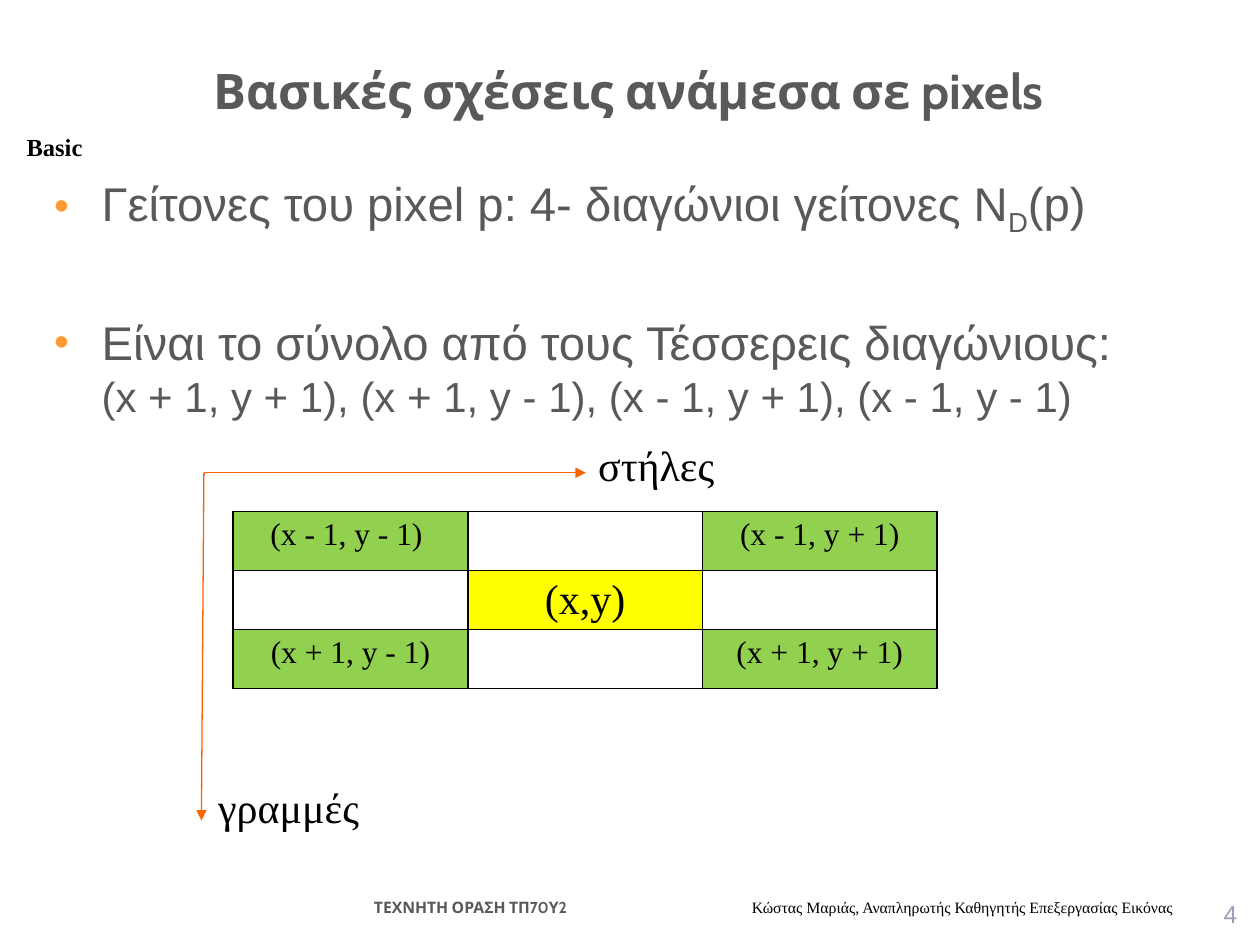
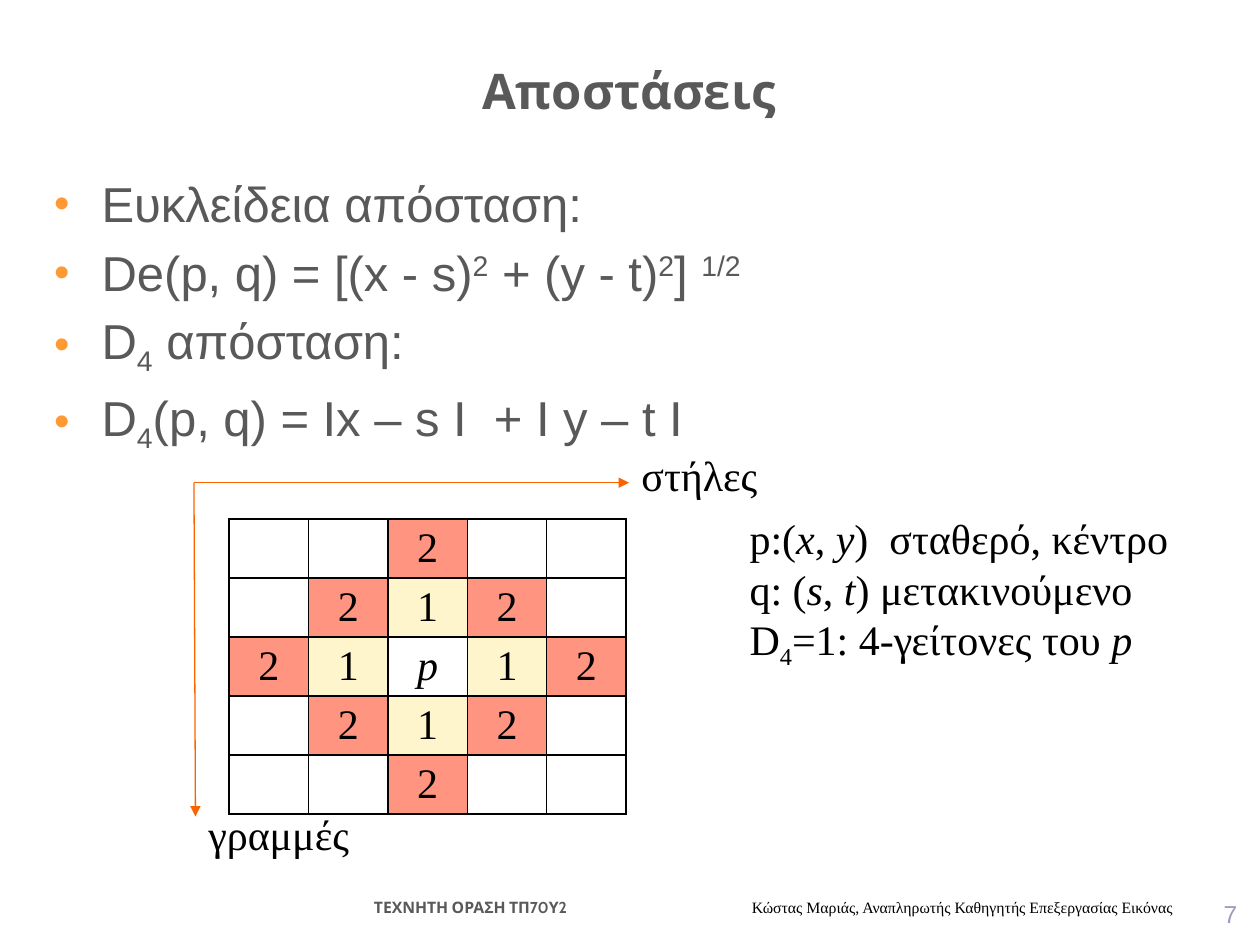
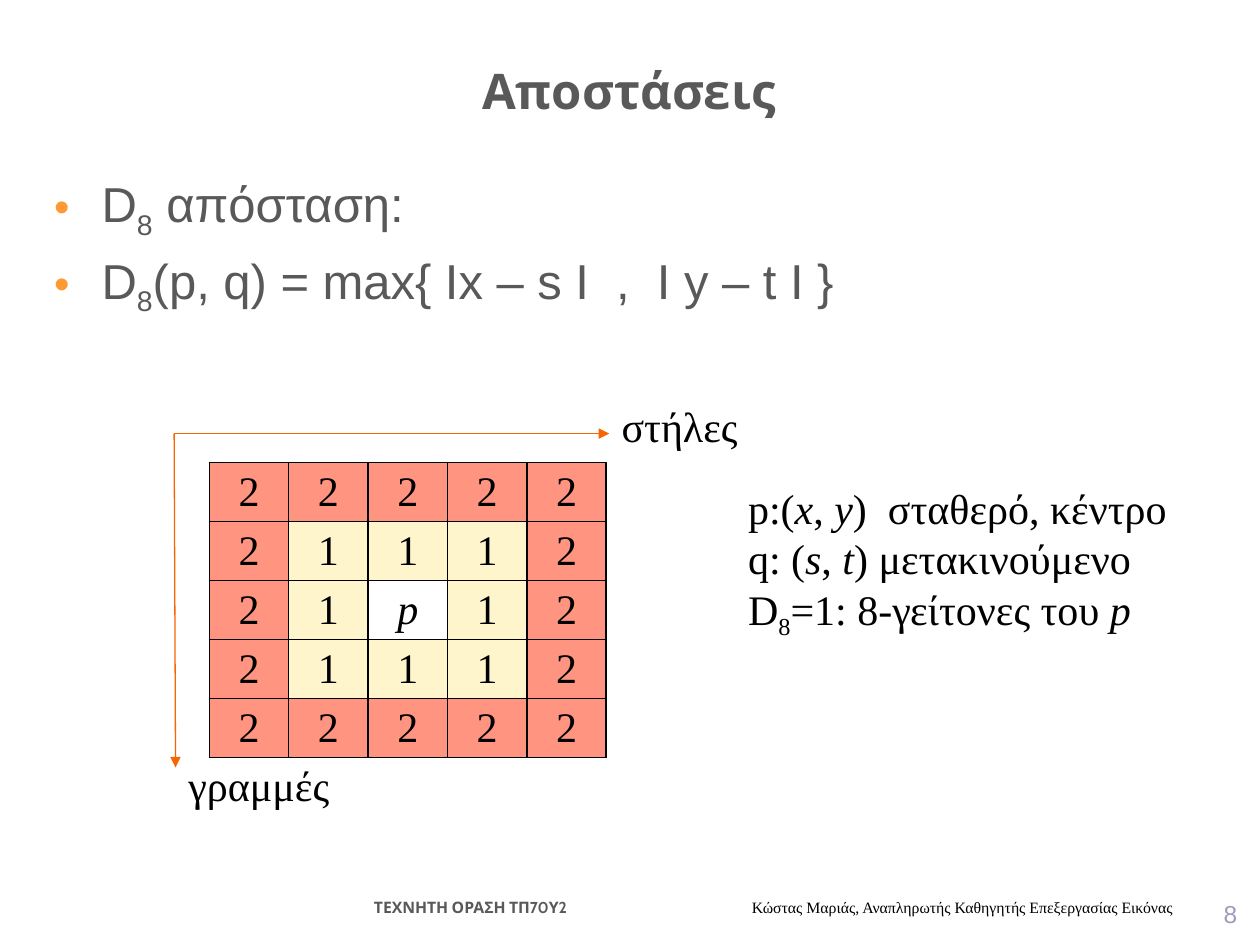
from dataclasses import dataclass

from lxml import etree
from pptx import Presentation
from pptx.dml.color import RGBColor
from pptx.enum.shapes import MSO_CONNECTOR
from pptx.enum.text import MSO_ANCHOR, PP_ALIGN
from pptx.oxml.ns import qn
from pptx.util import Cm, Pt

STRAIGHT = MSO_CONNECTOR.STRAIGHT
TOP, BOTTOM = MSO_ANCHOR.TOP, MSO_ANCHOR.BOTTOM
LEFT, CENTER, RIGHT = PP_ALIGN.LEFT, PP_ALIGN.CENTER, PP_ALIGN.RIGHT
SUB, SUP, ITALIC = {"baseline": -25}, {"baseline": 30}, {"italic": True}


@dataclass(frozen=True)
class Theme:
    body_font: str = "Arial"
    title_font: str = "Cabin"
    label_font: str = "Times New Roman"
    grey: str = "595959"
    black: str = "000000"
    white: str = "FFFFFF"
    number: str = "A299BD"
    bullet: str = "FF9933"
    axis: str = "F96400"
    diagonal: str = "92D050"
    center: str = "FFFF00"
    near: str = "FFF5CC"
    far: str = "FF9480"
    title_size: int = 28
    body_size: int = 28
    dense_size: int = 27
    label_size: int = 24
    cell_size: int = 18
    small_size: int = 14
    footer_size: int = 9


class Deck:
    def __init__(self, theme):
        self.t = theme
        self.prs = Presentation()
        self.prs.slide_width, self.prs.slide_height = Cm(25.4), Cm(19.05)
        self.s = None
        self.label_format = self.format(theme.label_font, theme.label_size, theme.black)

    def format(self, name, size, color, **extra):
        return {"name": name, "size": size, "color": color, **extra}

    def add_runs(self, p, runs, base):
        for item in runs:
            if item == "\n":
                p.add_line_break()
                continue
            text, extra = (item, {}) if isinstance(item, str) else item
            r = p.add_run()
            r.text = text
            for key, value in {**base, **extra}.items():
                if key == "color":
                    r.font.color.rgb = RGBColor.from_string(value)
                elif key == "baseline":
                    r._r.get_or_add_rPr().set(key, str(value * 1000))
                else:
                    setattr(r.font, key, Pt(value) if key == "size" else value)

    def text(self, box, paragraphs, fmt, align=LEFT, anchor=TOP, wrap=True, gaps=0,
             bullets=False, tabs=()):
        tf = self.s.shapes.add_textbox(*map(Cm, box)).text_frame
        tf.word_wrap, tf.vertical_anchor = wrap, anchor
        for i, runs in enumerate(paragraphs):
            p = tf.paragraphs[0] if i == 0 else tf.add_paragraph()
            if bullets:
                self.bullet(p)
            if tabs:
                self.tab_stops(p, tabs)
            p.alignment = align
            if i and gaps:
                p.space_before = Pt(gaps)
            self.add_runs(p, runs, fmt)

    def bullet(self, p):
        pPr = p._p.get_or_add_pPr()
        pPr.set("marL", str(Cm(0.96)))
        pPr.set("indent", str(-Cm(0.96)))
        color = etree.SubElement(pPr, qn("a:buClr"))
        etree.SubElement(color, qn("a:srgbClr"), val=self.t.bullet)
        etree.SubElement(pPr, qn("a:buSzPct"), val="90000")
        etree.SubElement(pPr, qn("a:buFont"), typeface=self.t.body_font)
        etree.SubElement(pPr, qn("a:buChar"), char="•")

    def tab_stops(self, p, tabs):
        stops = etree.SubElement(p._p.get_or_add_pPr(), qn("a:tabLst"))
        for position in tabs:
            etree.SubElement(stops, qn("a:tab"), pos=str(Cm(position)), algn="l")

    def slide(self, number, title):
        t = self.t
        self.s = self.prs.slides.add_slide(self.prs.slide_layouts[6])
        self.text((21.46, 18.06, 3.73, 0.79), [[str(number)]],
                  self.format(t.body_font, t.small_size, t.number), RIGHT, BOTTOM)
        author = {"name": t.label_font, "color": t.black, "bold": False}
        self.text((7.29, 17.98, 17.25, 0.64),
                  [["ΤΕΧΝΗΤΗ ΟΡΑΣΗ ΤΠ70Υ2\t\t",
                    ("Κώστας Μαριάς, Αναπληρωτής Καθηγητής Επεξεργασίας Εικόνας", author)]],
                  self.format(t.title_font, t.footer_size, t.grey, bold=True), tabs=(5.08, 7.62))
        self.text((0.43, 0.64, 24.49, 1.9), [[title]],
                  self.format(t.title_font, t.title_size, t.grey, bold=True), CENTER, BOTTOM)

    def body(self, paragraphs, size, gaps=5.5):
        fmt = self.format(self.t.body_font, size, self.t.grey)
        self.text((0.84, 3.38, 23.7, 14.6), paragraphs, fmt, gaps=gaps, bullets=True)

    def arrow(self, start, end):
        line = self.s.shapes.add_connector(STRAIGHT, *map(Cm, (*start, *end)))
        line.line.color.rgb = RGBColor.from_string(self.t.axis)
        line.line.width = Pt(0.75)
        etree.SubElement(line.line._get_or_add_ln(), qn("a:tailEnd"), type="triangle")
        etree.SubElement(line._element.spPr, qn("a:effectLst"))

    def axes(self, x, y, width, height, drift, label_width, label_drop):
        self.arrow((x, y), (x + drift, y + height))
        self.arrow((x, y), (x + width, y))
        self.text((x + width, y - 0.8, label_width, 1.27), [["στήλες"]], self.label_format)
        self.text((x + 0.04, y + label_drop, label_width, 1.27), [["γραμμές"]],
                  self.label_format)

    def border(self, cell):
        tcPr = cell._tc.get_or_add_tcPr()
        for i, side in enumerate(("lnL", "lnR", "lnT", "lnB")):
            ln = etree.Element(qn("a:" + side), w=str(Pt(1)))
            fill = etree.SubElement(ln, qn("a:solidFill"))
            etree.SubElement(fill, qn("a:srgbClr"), val=self.t.black)
            tcPr.insert(i, ln)

    def table(self, x, y, col_width, rows, row_height=1.19):
        n, m = len(rows), len(rows[0])
        frame = self.s.shapes.add_table(n, m, Cm(x), Cm(y), Cm(m * col_width), Cm(n * row_height))
        table = frame.table
        for col in table.columns:
            col.width = Cm(col_width)
        for row, values in zip(table.rows, rows):
            row.height = Cm(row_height)
            for cell, (text, color, extra) in zip(row.cells, values):
                cell.margin_bottom = Cm(0.04)
                cell.fill.solid()
                cell.fill.fore_color.rgb = RGBColor.from_string(color)
                self.border(cell)
                p = cell.text_frame.paragraphs[0]
                p.alignment = CENTER
                if text:
                    self.add_runs(p, [text], {**self.label_format, **extra})

    def distance_table(self, x, y, metric):
        t = self.t
        styles = {0: ("p", t.white, ITALIC), 1: ("1", t.near, {}), 2: ("2", t.far, {})}
        blank = ("", t.white, {})
        steps = range(-2, 3)
        self.table(x, y, 1.6, [[styles.get(metric(abs(dx), abs(dy)), blank) for dy in steps]
                               for dx in steps])

    def legend(self, x, y, n):
        self.text((x, y, 9.04, 4.37),
                  [["p:(", ("x", ITALIC), ", ", ("y", ITALIC), ")  σταθερό, κέντρο"],
                   ["q: (", ("s", ITALIC), ", ", ("t", ITALIC), ") μετακινούμενο"],
                   ["D", (n, SUB), f"=1: {n}-γείτονες του ", ("p", ITALIC)]],
                  self.label_format, wrap=False)


def neighbours(d):
    t = d.t
    d.slide(4, "Βασικές σχέσεις ανάμεσα σε pixels")
    d.body([["Γείτονες του pixel p: 4- διαγώνιοι γείτονες Ν", ("D", SUB), "(p)"],
            ["Είναι το σύνολο από τους Τέσσερεις διαγώνιους: ", "\n",
             ("(x + 1, y + 1), (x + 1, y - 1), (x - 1, y + 1), (x - 1, y - 1)",
              {"size": t.label_size})]], t.dense_size, gaps=43)
    blank = ("", t.white, {})

    def corner(text):
        return text, t.diagonal, {"size": t.cell_size}

    d.table(4.7, 10.31, 4.73, [
        [corner("(x - 1, y - 1) "), blank, corner("(x - 1, y + 1)")],
        [blank, ("(x,y)", t.center, {}), blank],
        [corner("(x + 1, y - 1)"), blank, corner("(x + 1, y + 1)")]])
    d.axes(4.11, 9.53, 7.7, 7.01, -0.05, 5.41, 6.09)
    d.text((-0.08, 2.21, 2.36, 1.17), [["Basic"]],
           d.format(t.label_font, t.small_size, t.black, bold=True), CENTER, BOTTOM)


def distances(d, number, paragraphs, corner, table_drop, legend, n, metric):
    x, y = corner
    d.slide(number, "Αποστάσεις")
    d.body(paragraphs, d.t.body_size)
    d.distance_table(x + 0.71, y + table_drop, metric)
    d.legend(*legend, n)
    d.axes(x, y, 8.77, 6.73, 0.03, 6.17, 6.45)


def main():
    d = Deck(Theme())
    neighbours(d)
    distances(d, 7, [
        ["Ευκλείδεια απόσταση:"],
        ["De(p, q) = [(x - s)", ("2", SUP), " + (y - t)", ("2", SUP), "] ", ("1/2", SUP)],
        ["D", ("4", SUB), " απόσταση:"],
        ["D", ("4", SUB), "(p, q) = Ix – s I  + I y – t I"],
    ], (3.91, 9.73), 0.73, (14.86, 10.21), "4", lambda dx, dy: dx + dy)
    distances(d, 8, [
        ["D", ("8", SUB), " απόσταση:"],
        ["D", ("8", SUB), "(p, q) = max{ Ix – s I  ,  I y – t I }"],
    ], (3.51, 8.74), 0.58, (14.83, 9.6), "8", max)
    d.prs.save("out.pptx")


if __name__ == "__main__":
    main()
